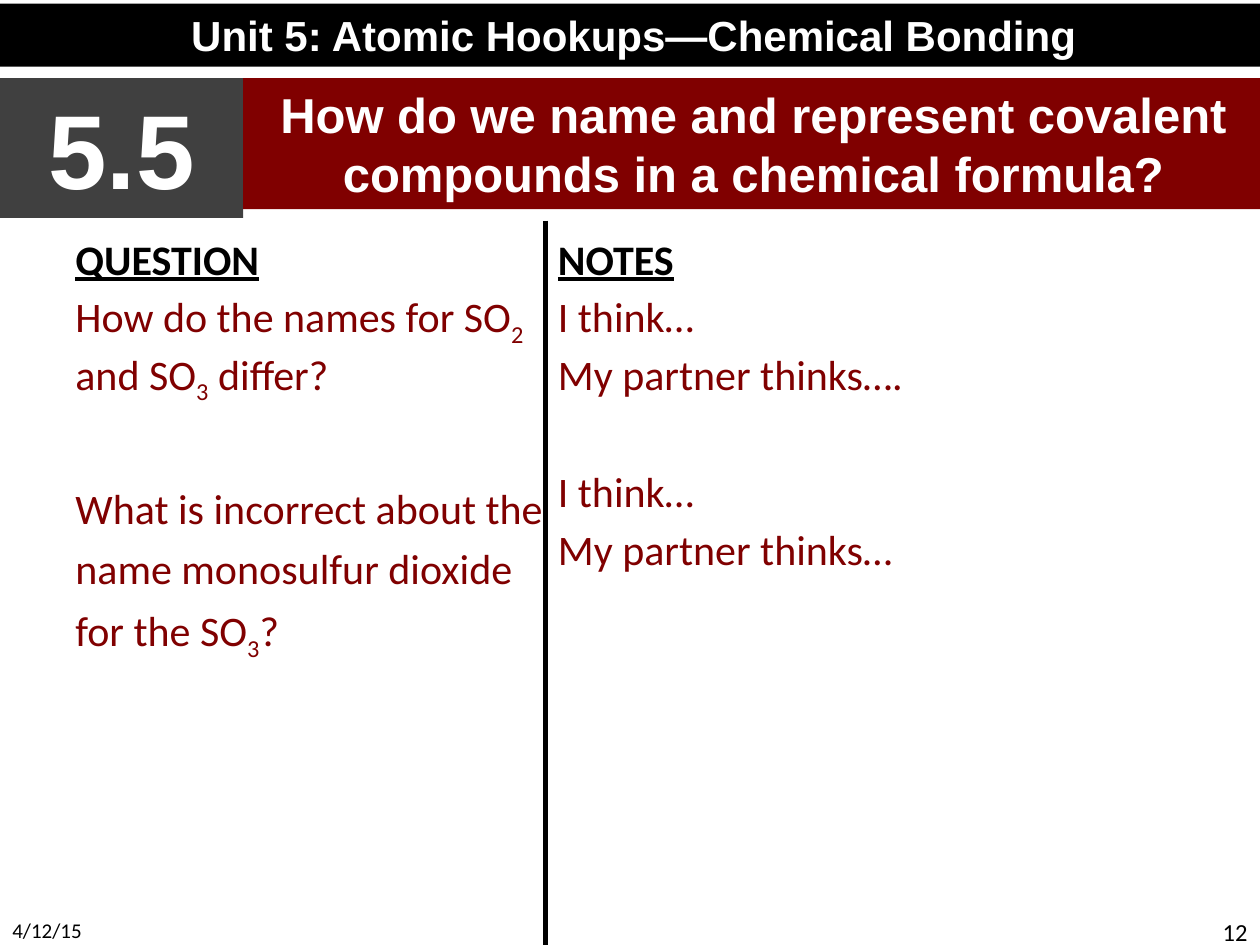
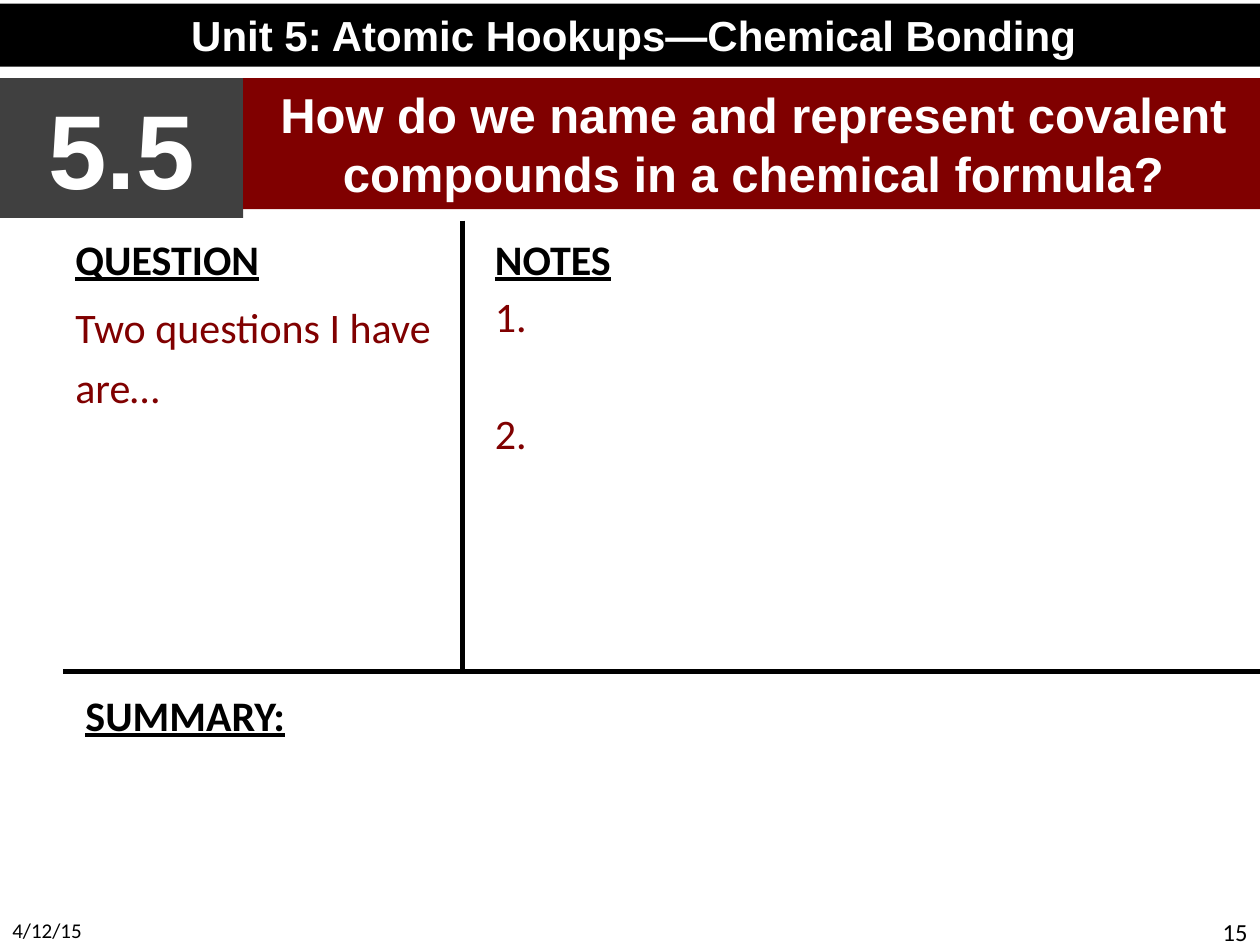
from lxml import etree
from pptx import Presentation
from pptx.dml.color import RGBColor
from pptx.enum.shapes import MSO_CONNECTOR, MSO_SHAPE
from pptx.enum.text import MSO_ANCHOR, PP_ALIGN
from pptx.oxml.ns import qn
from pptx.util import Inches, Pt

LEFT, MID, RIGHT = PP_ALIGN.LEFT, PP_ALIGN.CENTER, PP_ALIGN.RIGHT
TOP = MSO_ANCHOR.TOP
RECT, LINE = MSO_SHAPE.RECTANGLE, MSO_CONNECTOR.STRAIGHT
BLACK, GREY, RED, WHITE = "000000", "404040", "800000", "FFFFFF"
NEAR, FAR = 4.3, 38

HEAD = dict(name="Calibri", size=24, color=BLACK, bold=True, underline=True)
BODY = dict(name="Calibri", size=24, color=RED)
DATE = dict(name="Calibri", size=12, color=BLACK)
PAGE = dict(DATE, size=14)

BANDS = [
    ("Unit 5: Atomic Hookups—Chemical Bonding", (0, 0.03, 10.06, 0.5), BLACK, 24),
    ("5.5", (0, 0.62, 1.93, 1.11), GREY, 60),
    ("How do we name and represent covalent compounds in a chemical formula?",
     (1.93, 0.62, 8.1, 1.04), RED, 28),
]

# Each entry: text with ~subscripts~, space before, line spacing
SLIDES = [
    dict(
        page="12",
        boxes=[
            ("QUESTION", (0.5, 1.8, 3.92, 4.95), [
                ("How do the names for SO~2~ and SO~3~ differ?", NEAR, 1),
                ("What is incorrect about the name monosulfur dioxide for the SO~3~?",
                 FAR, 1.2),
            ]),
            ("NOTES", (4.33, 1.8, 5.67, 4.95), [
                ("I think…", NEAR, 1),
                ("My partner thinks….", NEAR, 1),
                ("I think…", FAR, 1),
                ("My partner thinks…", NEAR, 1),
            ]),
        ],
        rules=[(4.33, 1.75, 4.33, 7.5)],
    ),
    dict(
        page="15",
        boxes=[
            ("QUESTION", (0.5, 1.8, 3.17, 3.45), [
                ("Two questions I have are…", NEAR, 1.2),
            ]),
            ("NOTES", (3.83, 1.8, 6.17, 3.45), [
                ("1.", NEAR, 1),
                ("2.", FAR, 1),
            ]),
            ("SUMMARY:", (0.58, 5.42, 9.42, 2.08), []),
        ],
        rules=[(3.67, 1.75, 3.67, 5.33), (10, 5.33, 0.5, 5.33)],
    ),
]


def paint(code):
    return RGBColor.from_string(code)


def inch(spot):
    return [Inches(n) for n in spot]


def style(font, form):
    for key, val in form.items():
        if key == "color":
            font.color.rgb = paint(val)
        else:
            setattr(font, key, Pt(val) if key == "size" else val)


def write(para, text, form, align=LEFT):
    para.alignment = align
    for i, part in enumerate(text.split("~")):
        run = para.add_run()
        run.text = part
        style(run.font, form)
        if i % 2:
            run._r.get_or_add_rPr().set("baseline", "-25000")


def add_text(slide, spot):
    frame = slide.shapes.add_textbox(*inch(spot)).text_frame
    frame.word_wrap = True
    return frame


def add_band(slide, text, spot, fill, size):
    band = slide.shapes.add_shape(RECT, *inch(spot))
    band.shadow.inherit = False
    band.fill.solid()
    band.fill.fore_color.rgb = paint(fill)
    band.line.fill.background()
    frame = band.text_frame
    frame.word_wrap = True
    frame.vertical_anchor = TOP
    form = dict(name="Arial", size=size, color=WHITE, bold=True)
    write(frame.paragraphs[0], text, form, MID)


def add_rule(slide, ends):
    rule = slide.shapes.add_connector(LINE, *inch(ends))
    rule.line.color.rgb = paint(BLACK)
    rule.line.width = Pt(3)
    etree.SubElement(rule._element.spPr, qn("a:effectLst"))


def add_notes(slide, head, spot, lines):
    frame = add_text(slide, spot)
    write(frame.paragraphs[0], head, HEAD)
    for text, gap, pitch in lines:
        para = frame.add_paragraph()
        para.space_before = Pt(gap)
        para.line_spacing = pitch
        write(para, text, BODY)


def build(deck, data):
    slide = deck.slides.add_slide(deck.slide_layouts[6])
    foot = add_text(slide, (0, 7.23, 2.33, 0.27))
    write(foot.paragraphs[0], "4/12/15", DATE)
    foot = add_text(slide, (7.67, 7.23, 2.33, 0.27))
    write(foot.paragraphs[0], data["page"], PAGE, RIGHT)
    for band in BANDS:
        add_band(slide, *band)
    for ends in data["rules"]:
        add_rule(slide, ends)
    for box in data["boxes"]:
        add_notes(slide, *box)


def main():
    deck = Presentation()
    deck.slide_width, deck.slide_height = Inches(10), Inches(7.5)
    for data in SLIDES:
        build(deck, data)
    deck.save("out.pptx")


if __name__ == "__main__":
    main()
